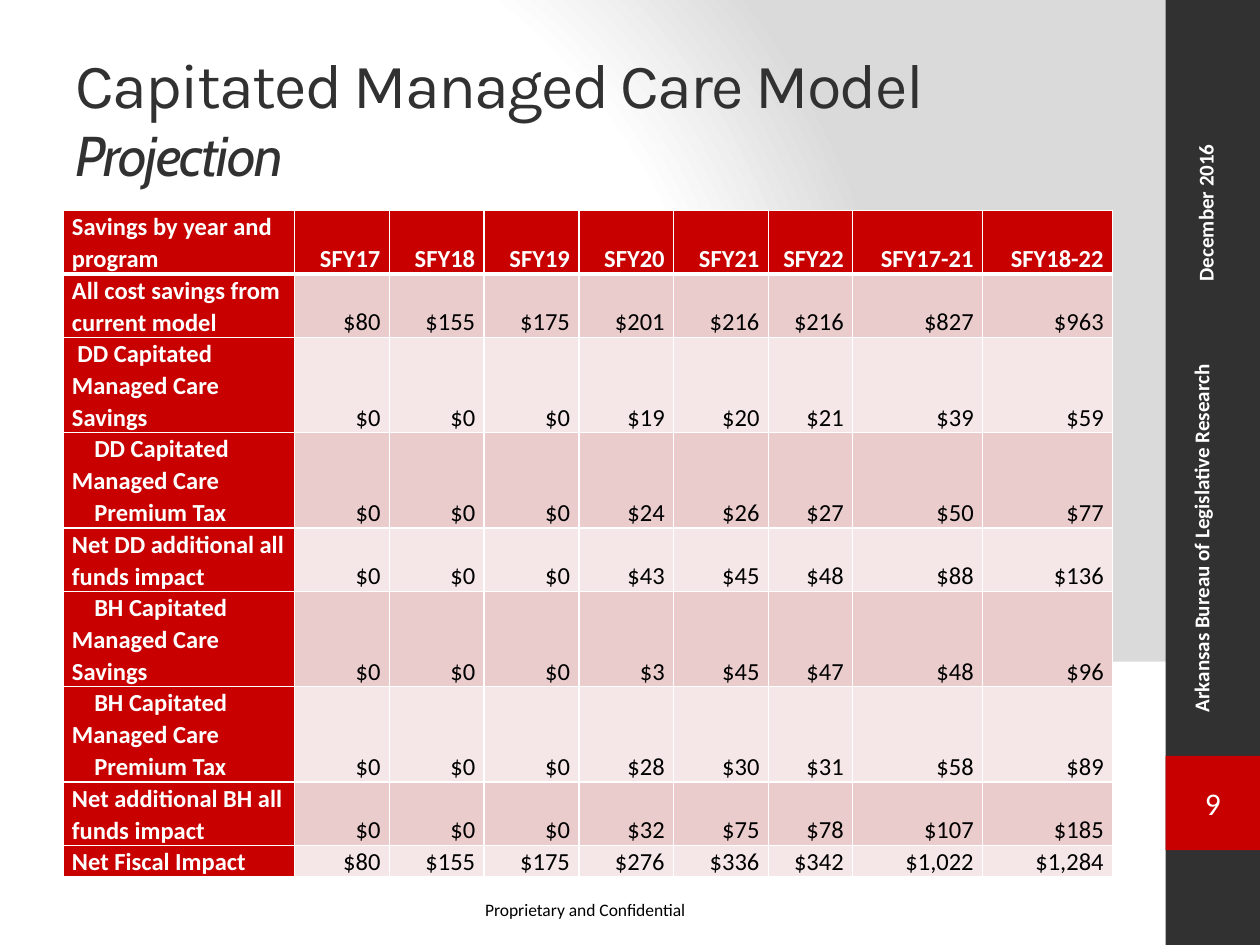
from dataclasses import dataclass
from lxml.etree import SubElement
from pptx import Presentation
from pptx.dml.color import RGBColor
from pptx.enum.shapes import MSO_SHAPE
from pptx.enum.text import MSO_ANCHOR, MSO_AUTO_SIZE, PP_ALIGN
from pptx.oxml import parse_xml
from pptx.oxml.ns import nsdecls, qn
from pptx.util import Cm, Pt


@dataclass(frozen=True)
class Theme:
    white: str = "FFFFFF"
    black: str = "000000"
    dark: str = "313131"
    red: str = "C90000"
    gray: str = "DADADA"
    bands: tuple = ("EBCCCC", "F5E7E7")
    head: str = "Karla"
    sub: str = "Cabin"
    body: str = "Calibri"
    big: int = 36
    mid: int = 32
    page: int = 18
    cell: int = 14
    side: int = 12
    foot: int = 10


@dataclass(frozen=True)
class Box:
    x: float
    y: float
    w: float
    h: float

    def inner(self, x, y, w, h):
        return Box(self.x + x, self.y + y, w, h)

    def lengths(self):
        return [Cm(n) for n in (self.x, self.y, self.w, self.h)]


THEME = Theme()
HEADS = ["SFY17", "SFY18", "SFY19", "SFY20", "SFY21", "SFY22", "SFY17-21", "SFY18-22"]
WIDTHS = [4.67] + [1.91] * 5 + [1.7, 2.62, 2.62]
LINE = 0.64
ROWS = [
    (["Savings by year and program"], 0, 2, HEADS),
    (["All cost savings from current model"], 0, 2, [80, 155, 175, 201, 216, 216, 827, 963]),
    (["DD Capitated Managed Care Savings"], 0.11, 3, [0, 0, 0, 19, 20, 21, 39, 59]),
    (["DD Capitated Managed Care", "Premium Tax"], 0.45, 3, [0, 0, 0, 24, 26, 27, 50, 77]),
    (["Net DD additional all funds impact"], 0, 2, [0, 0, 0, 43, 45, 48, 88, 136]),
    (["BH Capitated Managed Care Savings"], 0.45, 3, [0, 0, 0, 3, 45, 47, 48, 96]),
    (["BH Capitated Managed Care", "Premium Tax"], 0.45, 3, [0, 0, 0, 28, 30, 31, 58, 89]),
    (["Net additional BH all funds impact"], 0, 2, [0, 0, 0, 32, 75, 78, 107, 185]),
    (["Net Fiscal Impact"], 0, 1, [80, 155, 175, 276, 336, 342, 1022, 1284]),
]


def add_run(para, text, size, color, face=THEME.body, bold=False):
    run = para.add_run()
    run.text = text
    font = run.font
    font.name, font.size, font.bold = face, Pt(size), bold
    font.color.rgb = RGBColor.from_string(color)
    return run


def add_block(slide, box, color):
    shape = slide.shapes.add_shape(MSO_SHAPE.RECTANGLE, *box.lengths())
    shape.shadow.inherit = False
    shape.fill.solid()
    shape.fill.fore_color.rgb = RGBColor.from_string(color)
    shape.line.fill.background()
    return shape


def add_note(slide, box, text, size, color, bold=False, turned=False):
    frame = slide.shapes.add_textbox(*box.lengths()).text_frame
    frame.word_wrap = turned
    if turned:
        frame._txBody.bodyPr.set("vert", "vert270")
    add_run(frame.paragraphs[0], text, size, color, bold=bold)


def paint_back(slide):
    stops = "".join(
        f'<a:gs pos="{place * 1000}"><a:srgbClr val="{color}"/></a:gs>'
        for place, color in ((0, THEME.white), (75, THEME.white), (100, THEME.gray))
    )
    back = parse_xml(
        f'<p:bg {nsdecls("p", "a")}><p:bgPr><a:gradFill rotWithShape="1">'
        f'<a:gsLst>{stops}</a:gsLst><a:path path="circle">'
        '<a:fillToRect l="20000" t="50000" r="100000" b="50000"/></a:path>'
        "</a:gradFill><a:effectLst/></p:bgPr></p:bg>"
    )
    slide.element.cSld.insert(0, back)


def place_title(slide, box):
    title = slide.shapes.title
    title.left, title.top, title.width, title.height = box.lengths()
    frame = title.text_frame
    frame.auto_size = MSO_AUTO_SIZE.NONE
    frame.vertical_anchor = MSO_ANCHOR.MIDDLE
    para = frame.paragraphs[0]
    para.alignment = PP_ALIGN.LEFT
    first = add_run(para, "Capitated Managed Care Model", THEME.big, THEME.dark, THEME.head)
    para.add_line_break()
    last = add_run(para, "Projection", THEME.mid, THEME.dark, THEME.sub)
    last.font.italic = True
    for run in (first, last):
        run.font._element.set("spc", "-100")


def place_side(slide, box):
    add_block(slide, box, THEME.dark)
    page = add_block(slide, box.inner(0, 15.24, box.w, box.w), THEME.red).text_frame
    page.vertical_anchor = MSO_ANCHOR.MIDDLE
    page.paragraphs[0].alignment = PP_ALIGN.CENTER
    add_run(page.paragraphs[0], "9", THEME.page, THEME.white)
    for text, spot in (
        ("Arkansas Bureau of Legislative Research", box.inner(0.33, 5.72, 1.02, 8.89)),
        ("December 2016", box.inner(0.42, 1.27, 1.02, 4.65)),
    ):
        add_note(slide, spot, text, THEME.side, THEME.white, bold=True, turned=True)


def place_foot(slide, box):
    add_block(slide, box, THEME.white)
    add_note(slide, box.inner(9.53, 4.65, 4.6, 0.69), "Proprietary and Confidential",
             THEME.foot, THEME.black)


def edge_cell(cell, top, base):
    props = cell._tc.get_or_add_tcPr()
    for spot, (side, width) in enumerate((("L", 1), ("R", 1), ("T", top), ("B", base))):
        line = SubElement(props, qn(f"a:ln{side}"), w=str(Pt(width)))
        fill = SubElement(line, qn("a:solidFill"))
        SubElement(fill, qn("a:srgbClr"), val=THEME.white)
        props.insert(spot, line)


def fill_cell(cell, lines, color, ink, bold, side, indent=0):
    cell.fill.solid()
    cell.fill.fore_color.rgb = RGBColor.from_string(color)
    cell.vertical_anchor = MSO_ANCHOR.BOTTOM
    cell.margin_left = cell.margin_right = Cm(0.18)
    cell.margin_top = cell.margin_bottom = 0
    frame = cell.text_frame
    for spot, text in enumerate(lines):
        para = frame.add_paragraph() if spot else frame.paragraphs[0]
        para.alignment = side
        para.line_spacing = 1.07
        if indent:
            para._p.get_or_add_pPr().set("indent", str(Cm(indent)))
        add_run(para, text, THEME.cell, ink, bold=bold)


def place_table(slide, box):
    grid = slide.shapes.add_table(len(ROWS), len(WIDTHS), *box.lengths()).table
    for col, width in zip(grid.columns, WIDTHS):
        col.width = Cm(width)
    for r, (label, indent, count, values) in enumerate(ROWS):
        grid.rows[r].height = Cm(count * LINE)
        fill_cell(grid.cell(r, 0), label, THEME.red, THEME.white, True, PP_ALIGN.LEFT, indent)
        for c, value in enumerate(values, 1):
            text = f"${value:,}" if r else value
            color = THEME.bands[(r - 1) % 2] if r else THEME.red
            ink = THEME.black if r else THEME.white
            fill_cell(grid.cell(r, c), [text], color, ink, r == 0, PP_ALIGN.RIGHT)
        for c in range(len(WIDTHS)):
            edge_cell(grid.cell(r, c), 3 if r == 1 else 1, 3 if r == 0 else 1)


def main():
    deck = Presentation()
    deck.slide_width, deck.slide_height = Cm(25.4), Cm(19.05)
    slide = deck.slides.add_slide(deck.slide_layouts[5])
    paint_back(slide)
    place_foot(slide, Box(0, 13.34, 23.7, 5.71))
    place_side(slide, Box(23.5, 0, 1.9, 19.05))
    place_title(slide, Box(1.27, 0.76, 21.16, 3.18))
    place_table(slide, Box(1.27, 4.24, sum(WIDTHS), LINE * sum(row[2] for row in ROWS)))
    deck.save("out.pptx")


if __name__ == "__main__":
    main()
